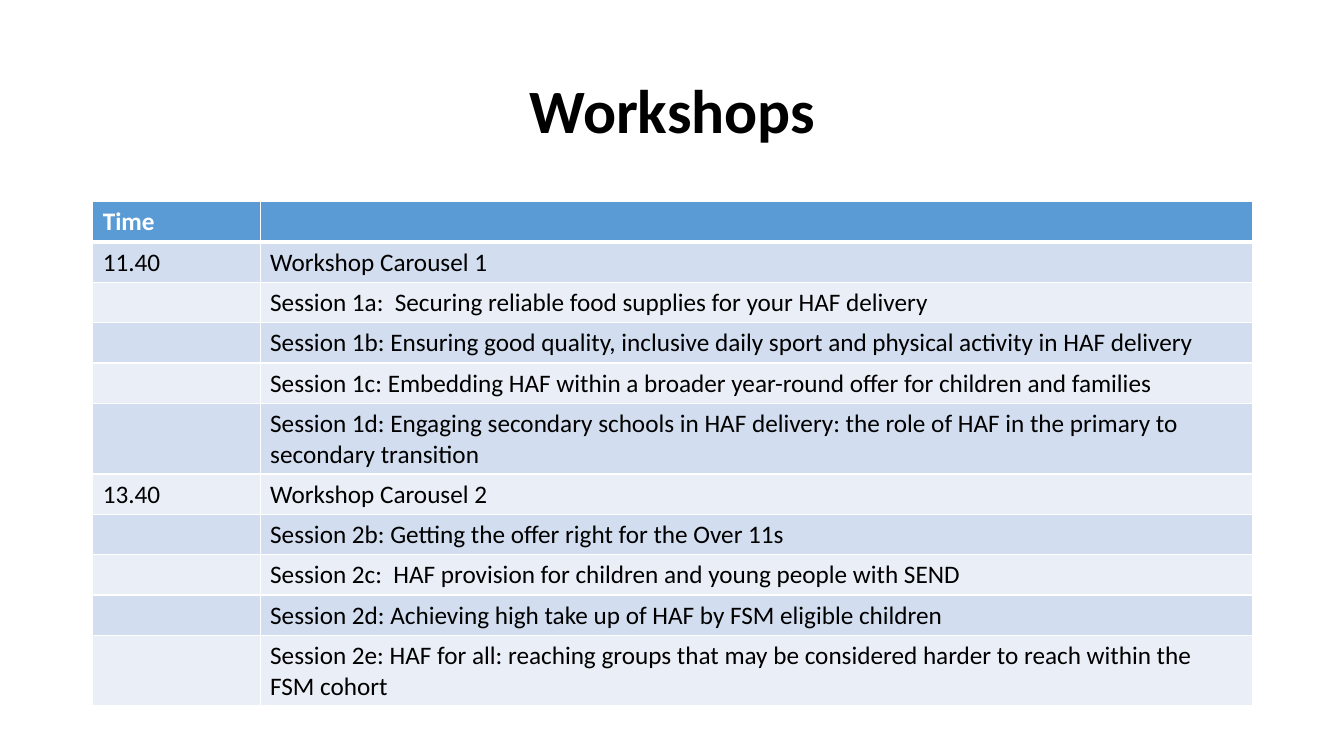
from lxml import etree
from pptx import Presentation
from pptx.dml.color import RGBColor
from pptx.enum.text import MSO_ANCHOR, PP_ALIGN
from pptx.oxml.ns import qn
from pptx.util import Inches, Pt

FONT = "Calibri"
COLORS = {
    "text": "000000",
    "white": "FFFFFF",
    "header": "5B9BD5",
    "band_dark": "D2DEEF",
    "band_light": "EAEFF7",
}
COLUMN_WIDTHS = [1.66, 9.84]
ROW_HEIGHT = 0.4
PROGRAMME = [
    ("Time", ""),
    ("11.40", "Workshop Carousel 1"),
    ("", "Session 1a:  Securing reliable food supplies for your HAF delivery"),
    ("", "Session 1b: Ensuring good quality, inclusive daily sport and physical activity in HAF delivery"),
    ("", "Session 1c: Embedding HAF within a broader year-round offer for children and families"),
    ("", "Session 1d: Engaging secondary schools in HAF delivery: "
         "the role of HAF in the primary to secondary transition"),
    ("13.40", "Workshop Carousel 2"),
    ("", "Session 2b: Getting the offer right for the Over 11s"),
    ("", "Session 2c:  HAF provision for children and young people with SEND"),
    ("", "Session 2d: Achieving high take up of HAF by FSM eligible children"),
    ("", "Session 2e: HAF for all: reaching groups that may be considered harder "
         "to reach within the FSM cohort"),
]


def rgb(name):
    return RGBColor.from_string(COLORS[name])


def set_font(p, size, color, bold):
    p.font.name = FONT
    p.font.size = Pt(size)
    p.font.bold = bold
    p.font.color.rgb = rgb(color)


def add_title(s, text):
    sp = s.shapes.add_textbox(Inches(0.92), Inches(0.4), Inches(11.5), Inches(1.45))
    tf = sp.text_frame
    tf.word_wrap = True
    tf.vertical_anchor = MSO_ANCHOR.MIDDLE
    p = tf.paragraphs[0]
    p.text = text
    p.alignment = PP_ALIGN.CENTER
    p.line_spacing = 0.9
    set_font(p, 44, "text", True)


def set_borders(cell, top, bottom):
    tcPr = cell._tc.get_or_add_tcPr()
    for side, width in (("L", 1), ("R", 1), ("T", top), ("B", bottom)):
        ln = etree.SubElement(tcPr, qn(f"a:ln{side}"), w=str(Pt(width)))
        fill = etree.SubElement(ln, qn("a:solidFill"))
        etree.SubElement(fill, qn("a:srgbClr"), val=COLORS["white"])


def fill_cell(cell, text, row):
    is_header = row == 0
    # The rule under the header is thicker than the others
    set_borders(cell, top=3 if row == 1 else 1, bottom=3 if is_header else 1)
    band = "band_dark" if row % 2 else "band_light"
    cell.fill.solid()
    cell.fill.fore_color.rgb = rgb("header" if is_header else band)
    p = cell.text_frame.paragraphs[0]
    if text:
        p.text = text
    set_font(p, 18, "white" if is_header else "text", is_header)


def add_programme(s, rows):
    frame = s.shapes.add_table(
        len(rows), len(COLUMN_WIDTHS), Inches(0.92), Inches(2),
        Inches(sum(COLUMN_WIDTHS)), Inches(ROW_HEIGHT * len(rows)))
    table = frame.table
    for column, width in zip(table.columns, COLUMN_WIDTHS):
        column.width = Inches(width)
    for i, texts in enumerate(rows):
        table.rows[i].height = Inches(ROW_HEIGHT)
        for j, text in enumerate(texts):
            fill_cell(table.cell(i, j), text, i)


def main():
    prs = Presentation()
    prs.slide_width = Inches(13.33)
    prs.slide_height = Inches(7.5)
    s = prs.slides.add_slide(prs.slide_layouts[6])

    # Heading
    add_title(s, "Workshops")
    # Timetable of sessions
    add_programme(s, PROGRAMME)

    prs.save("out.pptx")


if __name__ == "__main__":
    main()
